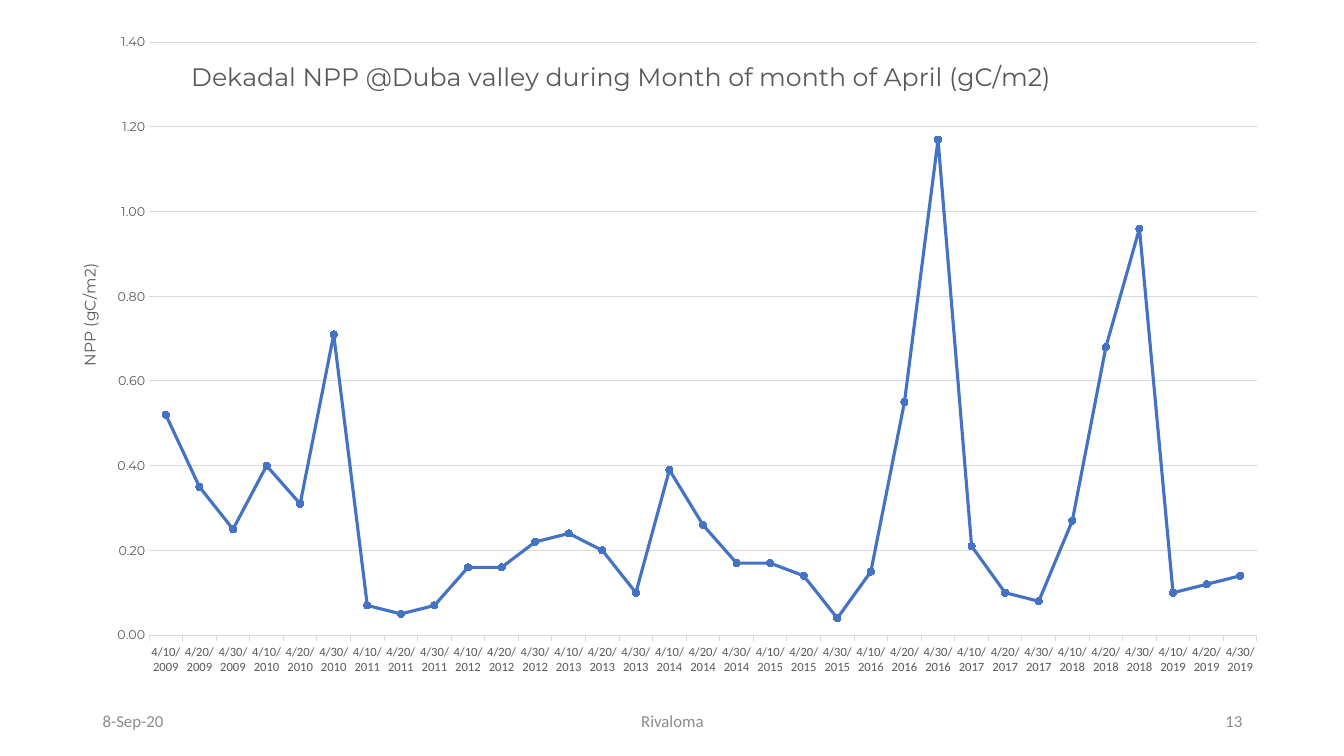
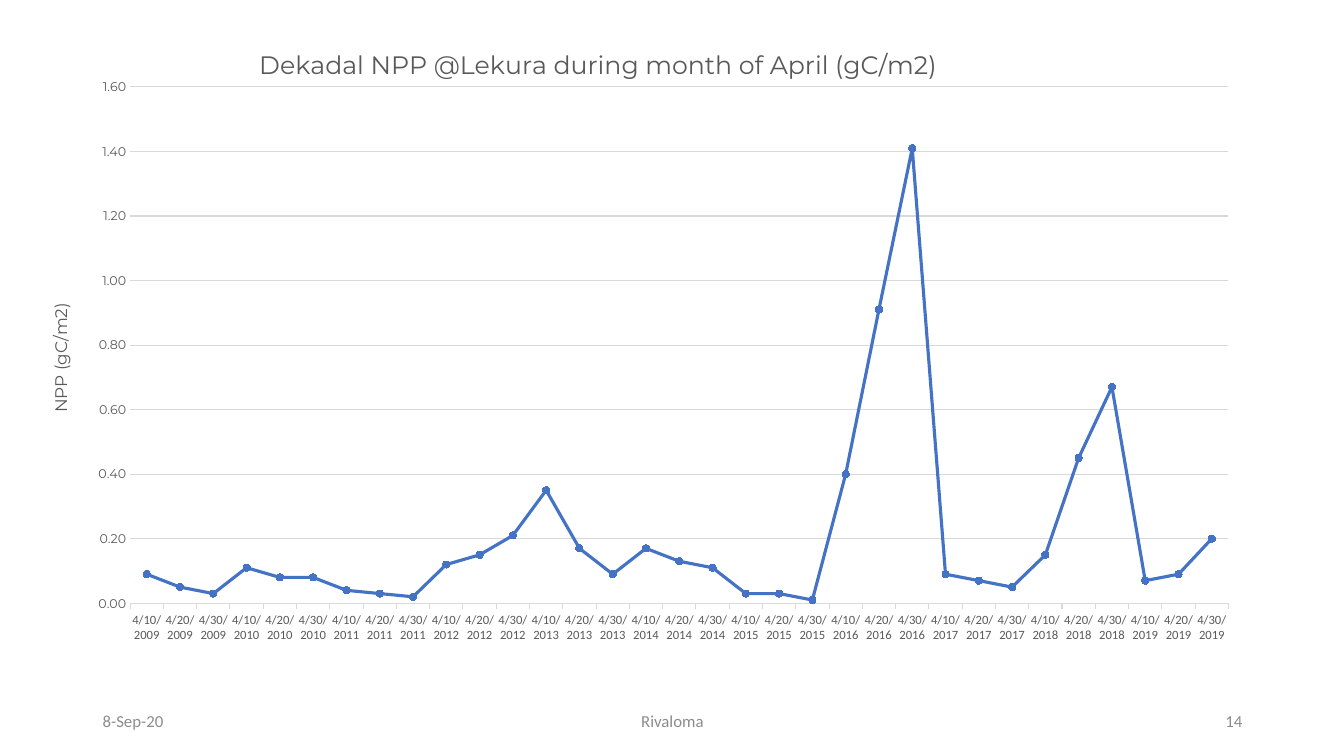
"""Build two slides with line charts of dekadal NPP in April."""
from dataclasses import dataclass

from lxml import etree
from pptx import Presentation
from pptx import util as u
from pptx.chart.data import CategoryChartData
from pptx.dml.color import RGBColor
from pptx.enum import chart as ch, text
from pptx.oxml.ns import qn

EMU_PER_PX = 9144
AXIS_TITLE = "NPP (gC/m2)"
DATES = [f"4/{day}/{year}" for year in range(2009, 2020) for day in (10, 20, 30)]


@dataclass(frozen=True)
class Theme:
    """Colours, fonts and type sizes shared by the slides."""

    background: str = "FFFFFF"
    series: str = "4472C4"
    label: str = "595959"
    grid: str = "D9D9D9"
    footer: str = "8C8C8C"
    body_font: str = "Calibri"
    head_font: str = "Montserrat"
    title_size: int = 18
    footer_size: int = 12
    base_size: int = 10
    tick_size: int = 9
    hairline: float = 0.75
    series_line: float = 2.25
    marker: int = 5


@dataclass(frozen=True)
class FooterItem:
    """One text of the footer band."""

    content: str
    left: int
    width: int
    align: text.PP_ALIGN


@dataclass(frozen=True)
class NppSlide:
    """Content and chart geometry of one slide; layouts are chart fractions."""

    number: int
    title: str
    box: tuple[int, int, int, int]
    plot: tuple[float, ...]
    title_at: tuple[float, ...]
    axis_title_at: tuple[float, ...]
    axis_title_size: int
    top: float
    values: tuple[float, ...]


THEME = Theme()
FOOTER_TOP, FOOTER_HEIGHT = 695, 40
SLIDES = [
    NppSlide(
        13, "Dekadal NPP @Duba valley during Month of month of April (gC/m2)",
        (59, 34, 1201, 661), (0.074, 0.012, 0.915, 0.89),
        (0.105, 0.03), (0.013, 0.34), 11, 1.4,
        (0.52, 0.35, 0.25, 0.4, 0.31, 0.71, 0.07, 0.05, 0.07, 0.16, 0.16,
         0.22, 0.24, 0.2, 0.1, 0.39, 0.26, 0.17, 0.17, 0.14, 0.04, 0.15,
         0.55, 1.17, 0.21, 0.1, 0.08, 0.27, 0.68, 0.96, 0.1, 0.12, 0.14)),
    NppSlide(
        14, "Dekadal NPP @Lekura during month of April (gC/m2)",
        (34, 23, 1188, 646), (0.08, 0.098, 0.917, 0.793),
        (0.184, 0.03), (0.01, 0.425), 12, 1.6,
        (0.09, 0.05, 0.03, 0.11, 0.08, 0.08, 0.04, 0.03, 0.02, 0.12, 0.15,
         0.21, 0.35, 0.17, 0.09, 0.17, 0.13, 0.11, 0.03, 0.03, 0.01, 0.4,
         0.91, 1.41, 0.09, 0.07, 0.05, 0.15, 0.45, 0.67, 0.07, 0.09, 0.2)),
]


def px(n: int) -> u.Emu:
    """Turn px into EMU."""
    return u.Emu(n * EMU_PER_PX)


def rgb(color: str) -> RGBColor:
    """Turn a hex string into a colour."""
    return RGBColor.from_string(color)


def format_font(font, *, size: int, color: str = THEME.label,
                name: str = THEME.body_font) -> None:
    """Set size, colour and typeface of a font."""
    font.size, font.name, font.bold = u.Pt(size), name, False
    font.color.rgb = rgb(color)


def format_line(line, *, color: str, width: float) -> None:
    """Set colour and width of a line."""
    line.color.rgb = rgb(color)
    line.width = u.Pt(width)


def write(tf, content: str, *, align: text.PP_ALIGN | None = None, **font) -> None:
    """Put one formatted run into a text frame."""
    p = tf.paragraphs[0]
    if align is not None:
        p.alignment = align
    r = p.add_run()
    r.text = content
    format_font(r.font, **font)


def place(parent, at: tuple[float, ...], *, inner: bool = False) -> None:
    """Give a chart element a manual layout."""
    for old in parent.findall(qn("c:layout")):
        parent.remove(old)
    layout = etree.Element(qn("c:layout"))
    manual = etree.SubElement(layout, qn("c:manualLayout"))
    settings = [("layoutTarget", "inner")] if inner else []
    settings += [("xMode", "edge"), ("yMode", "edge")]
    settings += zip("xywh", at)
    for tag, value in settings:
        etree.SubElement(manual, qn(f"c:{tag}")).set("val", str(value))
    parent.insert(0 if parent.find(qn("c:tx")) is None else 1, layout)


def format_axes(chart, item: NppSlide) -> None:
    """Style both axes and the value axis title."""
    dates, npp = chart.category_axis, chart.value_axis
    dates.major_tick_mark = ch.XL_TICK_MARK.OUTSIDE
    npp.major_tick_mark = ch.XL_TICK_MARK.NONE
    for axis, font in ((dates, THEME.body_font), (npp, THEME.head_font)):
        axis.minor_tick_mark = ch.XL_TICK_MARK.NONE
        format_font(axis.tick_labels.font, size=THEME.tick_size, name=font)
    dates.has_major_gridlines = False
    for line in (dates.format.line, npp.major_gridlines.format.line):
        format_line(line, color=THEME.grid, width=THEME.hairline)
    npp.format.line.fill.background()
    npp.minimum_scale, npp.maximum_scale, npp.major_unit = 0, item.top, 0.2
    npp.tick_labels.number_format = "0.00"
    npp.tick_labels.number_format_is_linked = False
    tf = npp.axis_title.text_frame
    write(tf, AXIS_TITLE, size=item.axis_title_size, name=THEME.head_font)
    body = tf._txBody.find(qn("a:bodyPr"))
    body.set("rot", "-5400000")
    body.set("vert", "horz")
    place(npp.axis_title._element, item.axis_title_at)


def add_npp_chart(s, item: NppSlide) -> None:
    """Add the line chart with its title."""
    data = CategoryChartData(number_format="0.00")
    data.categories = DATES
    data.add_series("Series 1", item.values)
    chart = s.shapes.add_chart(ch.XL_CHART_TYPE.LINE_MARKERS,
                               *map(px, item.box), data).chart
    chart.has_legend = False
    format_font(chart.font, size=THEME.base_size, color="000000")
    write(chart.chart_title.text_frame, item.title,
          size=THEME.title_size, name=THEME.head_font)
    place(chart.chart_title._element, item.title_at)
    place(chart._chartSpace.chart.plotArea, item.plot, inner=True)
    format_axes(chart, item)
    plot = chart.plots[0]
    plot.vary_by_categories = False
    series = plot.series[0]
    series.smooth = False
    format_line(series.format.line, color=THEME.series, width=THEME.series_line)
    marker = series.marker
    marker.style, marker.size = ch.XL_MARKER_STYLE.CIRCLE, THEME.marker
    marker.format.fill.solid()
    marker.format.fill.fore_color.rgb = rgb(THEME.series)
    format_line(marker.format.line, color=THEME.series, width=THEME.hairline)


def add_footer(s, number: int) -> None:
    """Add date, organisation and slide number."""
    for item in (FooterItem("8-Sep-20", 92, 300, text.PP_ALIGN.LEFT),
                 FooterItem("Rivaloma", 442, 450, text.PP_ALIGN.CENTER),
                 FooterItem(str(number), 942, 300, text.PP_ALIGN.RIGHT)):
        sp = s.shapes.add_textbox(px(item.left), px(FOOTER_TOP),
                                  px(item.width), px(FOOTER_HEIGHT))
        tf = sp.text_frame
        tf.word_wrap = True
        tf.vertical_anchor = text.MSO_ANCHOR.MIDDLE
        write(tf, item.content, align=item.align,
              size=THEME.footer_size, color=THEME.footer)


def main() -> None:
    """Build and save the presentation."""
    prs = Presentation()
    prs.slide_width, prs.slide_height = px(1333), px(750)
    fill = prs.slide_master.background.fill
    fill.solid()
    fill.fore_color.rgb = rgb(THEME.background)
    for item in SLIDES:
        s = prs.slides.add_slide(prs.slide_layouts[6])
        add_npp_chart(s, item)
        add_footer(s, item.number)
    prs.save("out.pptx")


if __name__ == "__main__":
    main()
